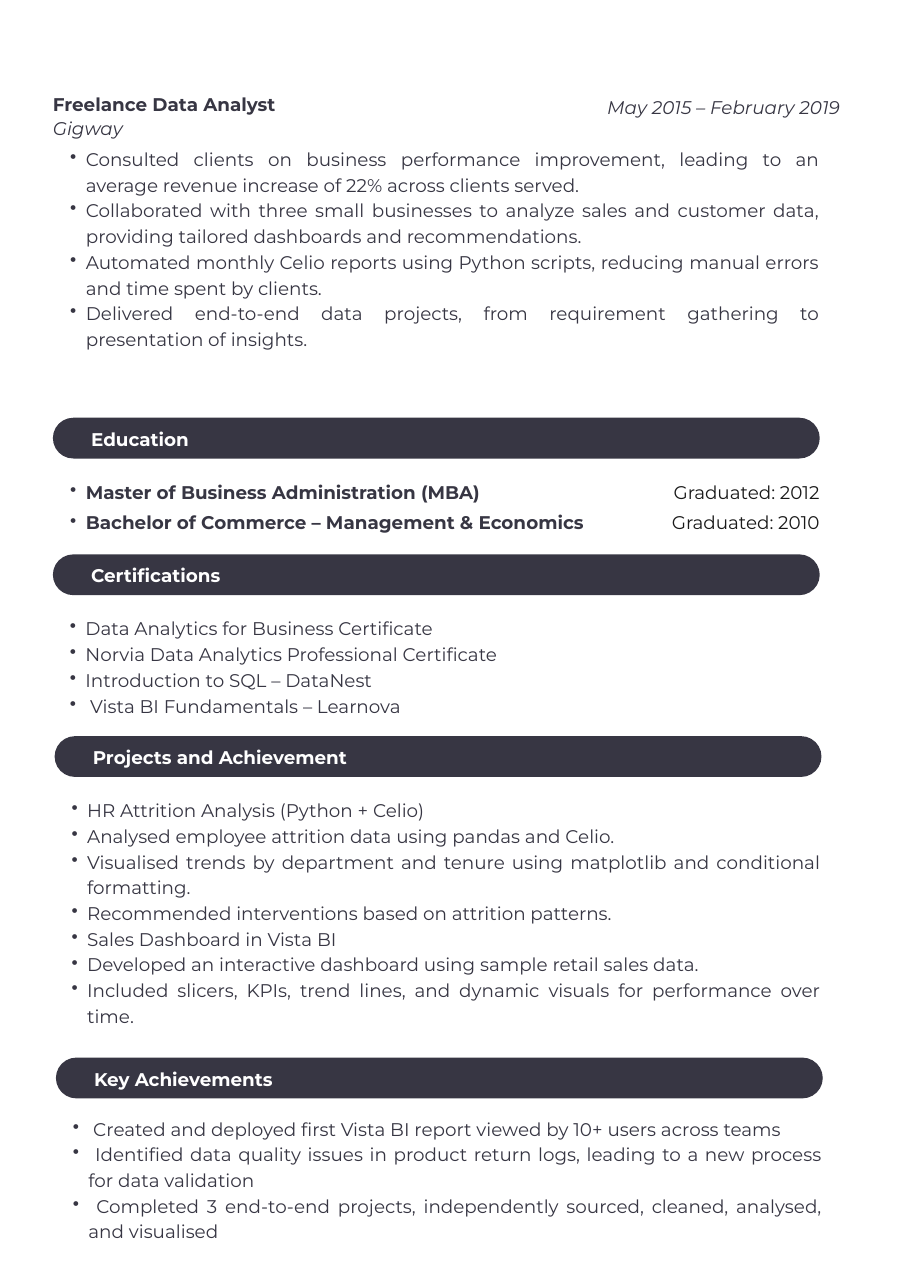
"""Build a résumé page with experience, education, certifications and achievements."""
from dataclasses import dataclass

import lxml.etree
import pptx
import pptx.dml.color
import pptx.enum.shapes
import pptx.enum.text
import pptx.oxml.ns
import pptx.util

Cm = pptx.util.Cm
Align = pptx.enum.text.PP_ALIGN

FONT = "Montserrat"
DARK = "373643"
BLACK = "191919"
WHITE = "FFFFFF"
LINE_HEIGHT = 0.56
COLUMN_WIDTH = 17.63
BAR_WIDTH, BAR_HEIGHT = 17.68, 0.94
DEGREE_PITCH = 0.71


@dataclass(frozen=True)
class Style:
    color: str = DARK
    bold: bool = False
    italic: bool = False
    align: Align = Align.LEFT
    bullet: bool = False


@dataclass(frozen=True)
class Section:
    heading: str
    left: float
    top: float
    body_offset: float = 1.37
    body_height: float = 2.87
    items: tuple[str, ...] = ()


@dataclass(frozen=True)
class Degree:
    name: str
    graduated: str


PLAIN = Style()
ITALIC = Style(italic=True)
BOLD = Style(bold=True)
HEADING = Style(color=WHITE, bold=True)
LIST = Style(align=Align.JUSTIFY, bullet=True)
DEGREE = Style(bold=True, bullet=True)
GRADUATION = Style(color=BLACK, align=Align.RIGHT)

JOB_DUTIES = (
    "Consulted clients on business performance improvement, leading to an average revenue increase of 22% across clients served.",
    "Collaborated with three small businesses to analyze sales and customer data, providing tailored dashboards and recommendations.",
    "Automated monthly Celio reports using Python scripts, reducing manual errors and time spent by clients.",
    "Delivered end-to-end data projects, from requirement gathering to presentation of insights.",
)

EDUCATION = Section("Education", 1.22, 9.63)
DEGREES = (
    Degree("Master of Business Administration (MBA)", "Graduated: 2012"),
    Degree("Bachelor of Commerce – Management & Economics", "Graduated: 2010"),
)

LIST_SECTIONS = (
    Section("Certifications", 1.22, 12.78, items=(
        "Data Analytics for Business Certificate",
        "Norvia Data Analytics Professional Certificate",
        "Introduction to SQL – DataNest",
        " Vista BI Fundamentals – Learnova",
    )),
    Section("Projects and Achievement", 1.26, 16.97, body_height=5.21, items=(
        "HR Attrition Analysis (Python + Celio)",
        "Analysed employee attrition data using pandas and Celio.",
        "Visualised trends by department and tenure using matplotlib and conditional formatting.",
        "Recommended interventions based on attrition patterns.",
        "Sales Dashboard in Vista BI",
        "Developed an interactive dashboard using sample retail sales data.",
        "Included slicers, KPIs, trend lines, and dynamic visuals for performance over time.",
    )),
    Section("Key Achievements", 1.29, 24.38, body_offset=1.3, items=(
        " Created and deployed first Vista BI report viewed by 10+ users across teams",
        " Identified data quality issues in product return logs, leading to a new process for data validation",
        " Completed 3 end-to-end projects, independently sourced, cleaned, analysed, and visualised",
    )),
)


def rgb(color: str) -> pptx.dml.color.RGBColor:
    return pptx.dml.color.RGBColor.from_string(color)


def add_bullet(paragraph) -> None:
    paragraph.level = 1
    properties = paragraph._p.get_or_add_pPr()
    properties.set("marL", str(Cm(0.71)))
    properties.set("indent", str(Cm(-0.36)))
    bullet = lxml.etree.SubElement(properties, pptx.oxml.ns.qn("a:buChar"))
    bullet.set("char", "•")


def write_text(shape, lines: tuple[str, ...], style: Style) -> None:
    frame = shape.text_frame
    frame.word_wrap = True
    frame.auto_size = pptx.enum.text.MSO_AUTO_SIZE.NONE
    frame.vertical_anchor = pptx.enum.text.MSO_ANCHOR.TOP
    frame.margin_left = frame.margin_top = frame.margin_right = frame.margin_bottom = 0
    for index, line in enumerate(lines):
        paragraph = frame.add_paragraph() if index else frame.paragraphs[0]
        if style.bullet:
            add_bullet(paragraph)
        paragraph.alignment = style.align
        paragraph.line_spacing = pptx.util.Pt(16.8)
        run = paragraph.add_run()
        run.text = line
        run.font.name = FONT
        run.font.size = pptx.util.Pt(12)
        run.font.bold = style.bold
        run.font.italic = style.italic
        run.font.color.rgb = rgb(style.color)


def add_text(slide, left: float, top: float, width: float, height: float,
             lines: tuple[str, ...], style: Style = PLAIN) -> None:
    shape = slide.shapes.add_textbox(Cm(left), Cm(top), Cm(width), Cm(height))
    write_text(shape, lines, style)


def add_heading(slide, section: Section) -> None:
    bar = slide.shapes.add_shape(
        pptx.enum.shapes.MSO_SHAPE.ROUNDED_RECTANGLE,
        Cm(section.left), Cm(section.top), Cm(BAR_WIDTH), Cm(BAR_HEIGHT))
    bar.adjustments[0] = 0.5
    bar.shadow.inherit = False
    bar.fill.solid()
    bar.fill.fore_color.rgb = rgb(DARK)
    bar.line.fill.background()
    add_text(slide, section.left + 0.88, section.top + 0.15, 7.1, LINE_HEIGHT,
             (section.heading,), HEADING)


def add_job(slide) -> None:
    title = slide.shapes.title
    title.left, title.top, title.width, title.height = Cm(1.22), Cm(2.06), Cm(8.13), Cm(LINE_HEIGHT)
    write_text(title, ("Freelance Data Analyst",), BOLD)
    add_text(slide, 1.22, 2.62, 8.13, LINE_HEIGHT, ("Gigway",), ITALIC)
    add_text(slide, 14, 2.13, 6.5, LINE_HEIGHT, ("May 2015 – February 2019",), ITALIC)
    add_text(slide, 1.27, 3.33, COLUMN_WIDTH, 4.62, JOB_DUTIES, LIST)


def add_education(slide) -> None:
    add_heading(slide, EDUCATION)
    for row, degree in enumerate(DEGREES):
        top = EDUCATION.top + EDUCATION.body_offset + row * DEGREE_PITCH
        add_text(slide, 1.27, top, 12.95, LINE_HEIGHT, (degree.name,), DEGREE)
        add_text(slide, 14, top, 4.9, LINE_HEIGHT, (degree.graduated,), GRADUATION)


def main() -> None:
    presentation = pptx.Presentation()
    presentation.slide_width, presentation.slide_height = Cm(20.98), Cm(29.69)
    slide = presentation.slides.add_slide(presentation.slide_layouts.get_by_name("Title Only"))
    add_job(slide)
    add_education(slide)
    for section in LIST_SECTIONS:
        add_heading(slide, section)
        add_text(slide, section.left + 0.04, section.top + section.body_offset,
                 COLUMN_WIDTH, section.body_height, section.items, LIST)
    presentation.save("out.pptx")


if __name__ == "__main__":
    main()
